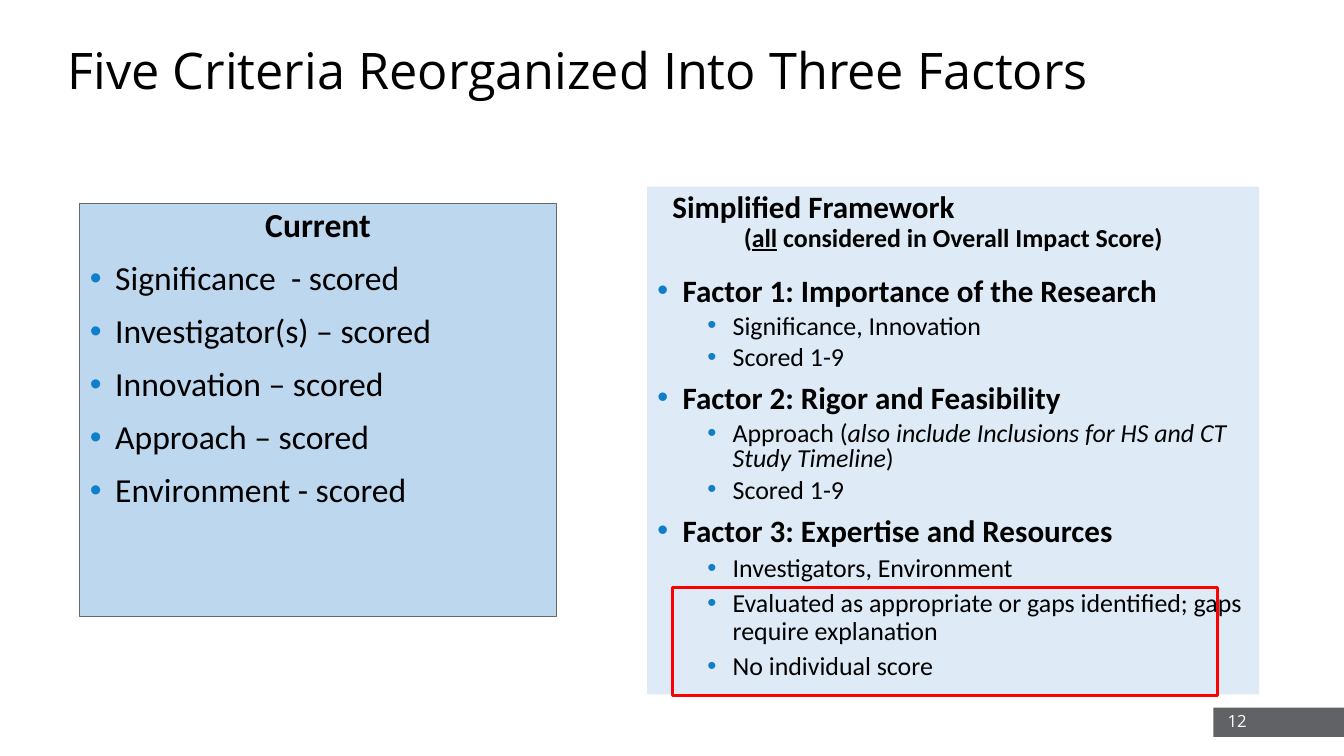
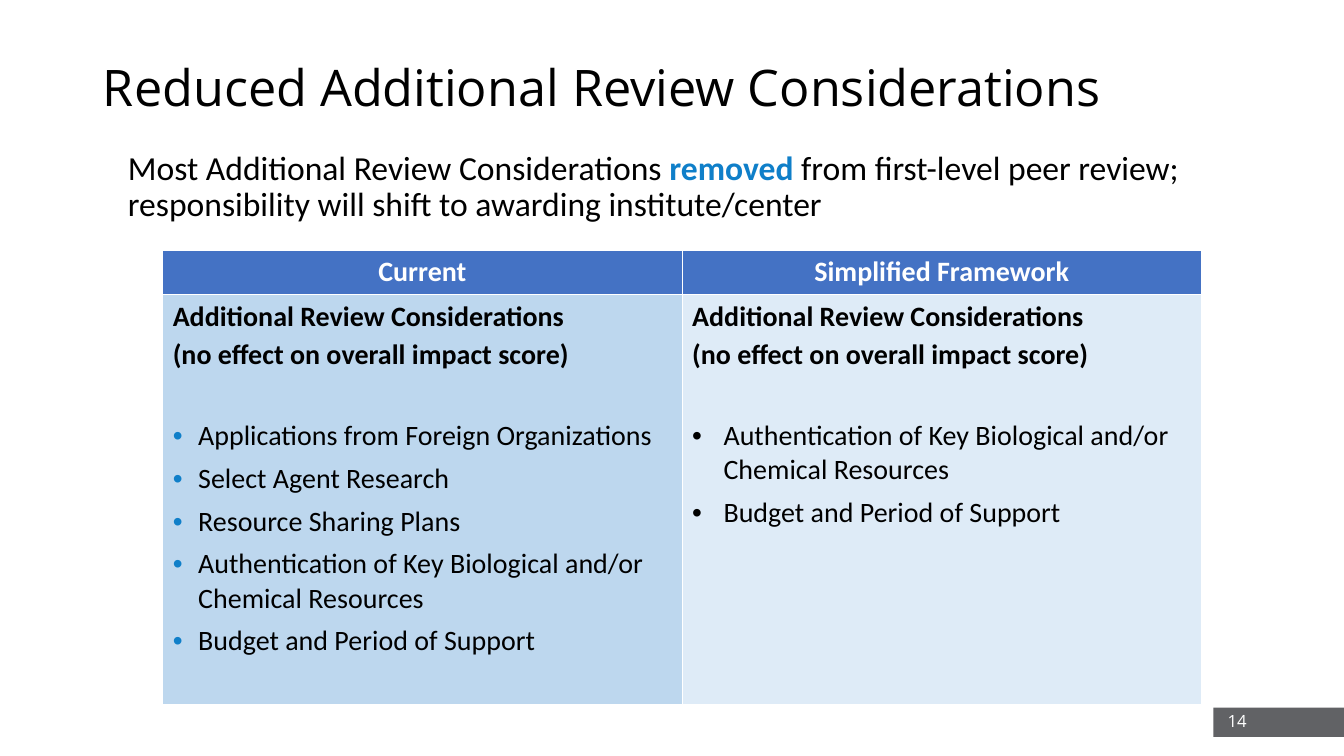
from collections import namedtuple

from lxml.etree import SubElement
from pptx import Presentation
from pptx.dml.color import RGBColor
from pptx.enum.shapes import MSO_SHAPE
from pptx.enum.text import MSO_ANCHOR, MSO_AUTO_SIZE, PP_ALIGN
from pptx.oxml.ns import qn
from pptx.util import Cm, Pt

Box = namedtuple("Box", "left top width height")

COLOURS = {
    "black": "000000",
    "white": "FFFFFF",
    "accent": "0F7FC9",
    "band": "616265",
    "outline": "68686D",
    "header": "4472C4",
    "current": "BDD7EE",
    "simplified": "DEEBF7",
    "highlight": "FF0000",
}
TITLE_FONT = "Open Sans"
BODY_FONT = "Calibri"
SLIDE_WIDTH, SLIDE_HEIGHT = 33.87, 19.05
BAND = Box(30.58, 17.83, 3.29, 0.74)

CURRENT_CRITERIA = [
    "Significance  - scored",
    "Investigator(s) – scored",
    "Innovation – scored",
    "Approach – scored",
    "Environment - scored",
]
FACTORS = [
    ("Factor 1: Importance of the Research", 0.8,
     ["Significance, Innovation", "Scored 1-9"]),
    ("Factor 2: Rigor and Feasibility", 0.8,
     [[("Approach (", {}),
       ("also include Inclusions for HS and CT Study Timeline", {"italic": True}),
       (")", {})],
      "Scored 1-9"]),
    ("Factor 3: Expertise and Resources", 0.9,
     ["Investigators, Environment",
      "Evaluated as appropriate or gaps identified; gaps require explanation",
      "No individual score"]),
]
CONSIDERATIONS_HEADING = [
    "Additional Review Considerations",
    "(no effect on overall impact score)",
]
KEPT_CONSIDERATIONS = [
    "Authentication of Key Biological and/or Chemical Resources",
    "Budget and Period of Support",
]
REMOVED_CONSIDERATIONS = [
    "Applications from Foreign Organizations",
    "Select Agent Research",
    "Resource Sharing Plans",
]


def colour(name):
    """Return the named palette colour."""
    return RGBColor.from_string(COLOURS[name])


def place(shape, box):
    """Move and size a shape to a box in centimetres."""
    shape.left, shape.top, shape.width, shape.height = (Cm(length) for length in box)


def paint(shape, fill=None, line=None, line_width=0.75):
    """Set the fill and outline of a shape."""
    if fill:
        shape.fill.solid()
        shape.fill.fore_color.rgb = colour(fill)
    else:
        shape.fill.background()
    if line:
        shape.line.color.rgb = colour(line)
        shape.line.width = Pt(line_width)
    else:
        shape.line.fill.background()


def set_bullet(paragraph, bullet, margin, hanging):
    """Set the indents and the bullet colour, or remove the bullet."""
    properties = paragraph._p.get_or_add_pPr()
    properties.set("marL", str(Cm(margin)))
    properties.set("indent", str(-Cm(hanging)))
    if not bullet:
        SubElement(properties, qn("a:buNone"))
        return
    bullet_colour = SubElement(properties, qn("a:buClr"))
    SubElement(bullet_colour, qn("a:srgbClr")).set("val", COLOURS[bullet])
    SubElement(properties, qn("a:buFont")).set("typeface", "Arial")
    SubElement(properties, qn("a:buChar")).set("char", "•")


def write(frame, text, size=20, font=BODY_FONT, color="black", bold=False,
          align=PP_ALIGN.LEFT, spacing=1.0, before=0, after=0, level=0,
          bullet=None, margin=0, hanging=0):
    """Add a paragraph of plain text or of (text, format) runs."""
    paragraph = frame.add_paragraph() if frame.text else frame.paragraphs[0]
    set_bullet(paragraph, bullet, margin, hanging)
    paragraph.level = level
    paragraph.alignment = align
    paragraph.line_spacing = spacing
    paragraph.space_before, paragraph.space_after = Pt(before), Pt(after)
    for words, extra in [(text, {})] if isinstance(text, str) else text:
        run = paragraph.add_run()
        run.text = words
        run.font.name, run.font.size = font, Pt(size)
        run.font.bold = extra.get("bold", bold)
        run.font.italic = extra.get("italic", False)
        run.font.underline = extra.get("underline", False)
        run.font.color.rgb = colour(extra.get("color", color))


def prepare_frame(shape, anchor=MSO_ANCHOR.TOP):
    """Return the wrapping text frame of a shape."""
    frame = shape.text_frame
    frame.word_wrap = True
    frame.auto_size = MSO_AUTO_SIZE.NONE
    frame.vertical_anchor = anchor
    return frame


def add_rectangle(slide, box, **look):
    """Add a plain rectangle without shadow."""
    rectangle = slide.shapes.add_shape(
        MSO_SHAPE.RECTANGLE, *(Cm(length) for length in box))
    rectangle.shadow.inherit = False
    paint(rectangle, **look)


def start_slide(presentation, layout, title, title_box, number):
    """Add a slide with its title, footer band and page number."""
    slide = presentation.slides.add_slide(presentation.slide_layouts[layout])
    place(slide.shapes.title, title_box)
    write(prepare_frame(slide.shapes.title, MSO_ANCHOR.MIDDLE), title,
          size=36, font=TITLE_FONT, spacing=0.9)
    add_rectangle(slide, BAND, fill="band")
    number_box = Box(BAND.left - 0.25, BAND.top - 0.18, 1.34, 1.02)
    page_number = slide.shapes.add_textbox(*(Cm(length) for length in number_box))
    write(prepare_frame(page_number, MSO_ANCHOR.MIDDLE), number, size=12,
          font=TITLE_FONT, color="white", align=PP_ALIGN.RIGHT)
    return slide


def fill_current_panel(panel, box):
    """Write the list of current criteria into its panel."""
    place(panel, box)
    paint(panel, fill="current", line="outline")
    frame = prepare_frame(panel)
    write(frame, "Current", size=24, bold=True, align=PP_ALIGN.CENTER, spacing=0.9)
    for criterion in CURRENT_CRITERIA:
        write(frame, criterion, size=24, spacing=0.9, before=12,
              bullet="accent", margin=0.64, hanging=0.64)


def fill_framework_panel(slide, panel, box):
    """Write the three factors and outline the unscored part."""
    place(panel, box)
    paint(panel, fill="simplified")
    frame = prepare_frame(panel)
    write(frame, "Simplified Framework", size=22.2, bold=True, spacing=0.9, margin=0.38)
    write(frame, [("(", {}), ("all", {"underline": True}),
                  (" considered in Overall Impact Score)", {})],
          size=18.5, bold=True, align=PP_ALIGN.CENTER, spacing=0.9, after=8)
    for factor, spacing, details in FACTORS:
        write(frame, factor, size=22.2, bold=True, spacing=0.8, before=10,
              bullet="accent", margin=0.64, hanging=0.64)
        for detail in details:
            write(frame, detail, size=18.5, spacing=spacing, before=5, level=1,
                  bullet="accent", margin=1.9, hanging=0.64)
    add_rectangle(slide, Box(box.left + 0.63, box.top + 10.11, 13.74, 2.72),
                  line="highlight", line_width=2.25)


def fill_considerations(cell, items, bullet, indent):
    """Write a bold heading and a bulleted list into a table cell."""
    frame = cell.text_frame
    for index, line in enumerate(CONSIDERATIONS_HEADING):
        write(frame, line, bold=True, before=3 * index)
    for index, item in enumerate(items):
        write(frame, item, before=6 if index else 33.4, bullet=bullet,
              margin=indent, hanging=indent)


def add_considerations_table(slide, box):
    """Add the table that compares the review considerations."""
    header_height = 1.07
    table = slide.shapes.add_table(2, 2, *(Cm(length) for length in box)).table
    table.horz_banding = False
    table.rows[0].height = Cm(header_height)
    table.rows[1].height = Cm(box.height - header_height)
    columns = [
        ("Current", "current", REMOVED_CONSIDERATIONS + KEPT_CONSIDERATIONS,
         "accent", 0.64),
        ("Simplified Framework", "simplified", KEPT_CONSIDERATIONS, "black", 0.79),
    ]
    for index, (heading, fill, items, bullet, indent) in enumerate(columns):
        header, body = table.cell(0, index), table.cell(1, index)
        for cell, cell_fill in ((header, "header"), (body, fill)):
            cell.fill.solid()
            cell.fill.fore_color.rgb = colour(cell_fill)
        write(header.text_frame, heading, color="white", bold=True,
              align=PP_ALIGN.CENTER)
        fill_considerations(body, items, bullet, indent)


def add_factors_slide(presentation):
    """Build the slide that sets five criteria against three factors."""
    slide = start_slide(presentation, 3, "Five Criteria Reorganized Into Three Factors",
                        Box(1.45, 0, 29.21, 3.68), "12")
    fill_current_panel(slide.placeholders[1], Box(2.01, 5.13, 12.01, 10.41))
    fill_framework_panel(slide, slide.placeholders[2], Box(16.31, 4.7, 15.42, 12.8))


def add_considerations_slide(presentation):
    """Build the slide on the reduced review considerations."""
    slide = start_slide(presentation, 1, "Reduced Additional Review Considerations",
                        Box(2.34, 0.43, 29.54, 3.68), "14")
    summary = slide.placeholders[1]
    place(summary, Box(2.97, 3.68, 27.31, 2.3))
    write(prepare_frame(summary),
          [("Most Additional Review Considerations ", {}),
           ("removed", {"bold": True, "color": "accent"}),
           (" from first-level peer review; responsibility will shift to "
            "awarding institute/center", {})],
          size=24, spacing=0.9)
    add_considerations_table(slide, Box(4.1, 6.3, 26.18, 11.4))


def main():
    """Build and save the presentation."""
    presentation = Presentation()
    presentation.slide_width = Cm(SLIDE_WIDTH)
    presentation.slide_height = Cm(SLIDE_HEIGHT)
    add_factors_slide(presentation)
    add_considerations_slide(presentation)
    presentation.save("out.pptx")


if __name__ == "__main__":
    main()
